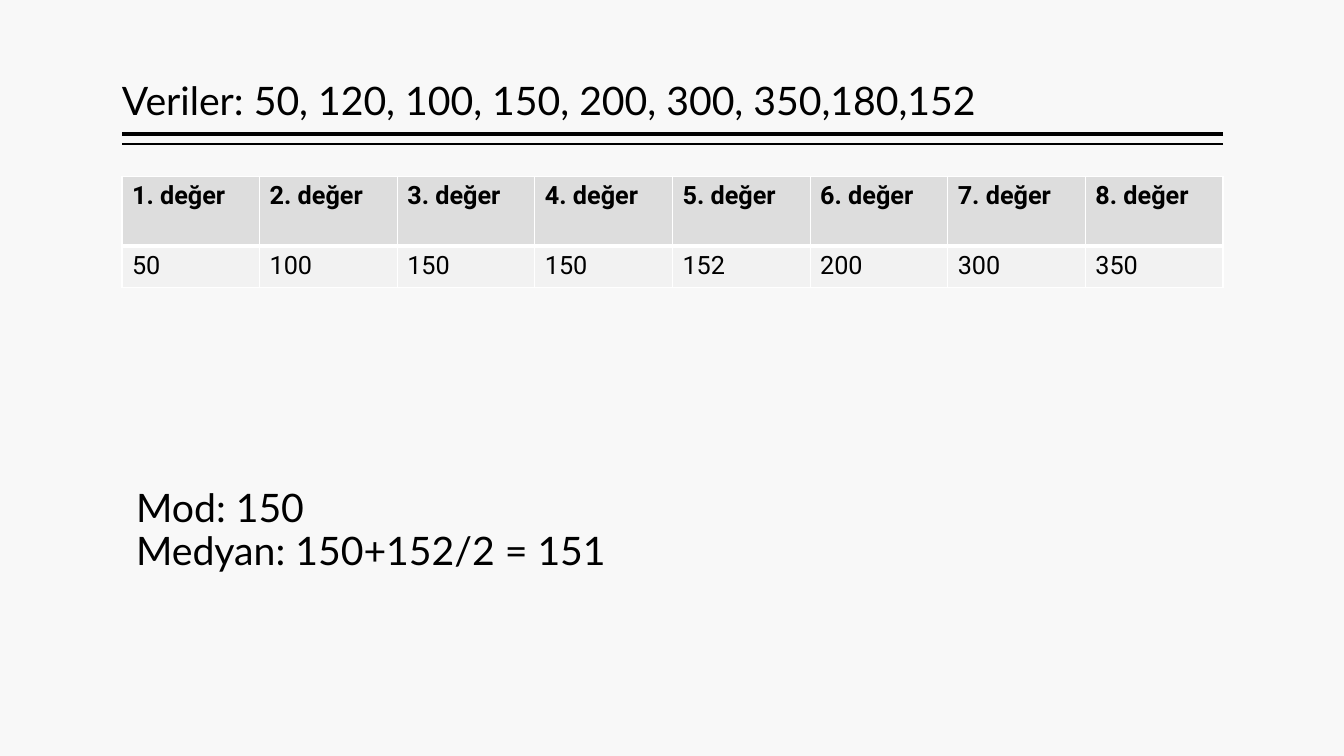
from lxml import etree
from pptx import Presentation
from pptx.dml.color import RGBColor
from pptx.enum import shapes, text
from pptx.oxml import ns
from pptx.util import Inches, Pt

BLACK = RGBColor(0, 0, 0)
WHITE = RGBColor(255, 255, 255)
PAGE_FILL = RGBColor(0xF8, 0xF8, 0xF8)
HEADER_FILL = RGBColor(0xDD, 0xDD, 0xDD)
BODY_FILL = RGBColor(0xF2, 0xF2, 0xF2)

DATA_TITLE = "Veriler: 50, 120, 100, 150, 200, 300, 350,180,152"
SORTED_VALUES = [50, 100, 150, 150, 152, 200, 300, 350]
RESULTS = ["Mod: 150", "Medyan: 150+152/2 = 151"]


def add_rule(page, left, top, width, weight):
    rule = page.shapes.add_connector(
        shapes.MSO_CONNECTOR.STRAIGHT,
        Inches(left + width), Inches(top), Inches(left), Inches(top))
    rule.line.color.rgb = BLACK
    rule.line.width = Pt(weight)
    etree.SubElement(rule._element.spPr, ns.qn("a:effectLst"))


def add_large_text(page, left, top, width, height, lines):
    """Add bottom-anchored lines in the heading style."""
    box = page.shapes.add_textbox(
        Inches(left), Inches(top), Inches(width), Inches(height))
    frame = box.text_frame
    frame.word_wrap = True
    frame.vertical_anchor = text.MSO_ANCHOR.BOTTOM
    frame.margin_left = frame.margin_right = 0
    frame.text = "\n".join(lines)
    for para in frame.paragraphs:
        para.line_spacing = 0.9
        para.font.name = "Lato"
        para.font.size = Pt(28)
        para.font.color.rgb = BLACK


def add_heading(page, left, top, width, height):
    """Place the title with a thick and a thin rule below it."""
    add_large_text(page, left, top, width, height, [DATA_TITLE])
    bottom = top + height
    add_rule(page, left, bottom + 0.05, width, 3)
    add_rule(page, left, bottom + 0.15, width, 1)


def set_borders(cell, weights):
    """Draw white borders; weights maps each side's tag to points."""
    properties = cell._tc.get_or_add_tcPr()
    for position, (side, weight) in enumerate(weights.items()):
        border = etree.Element(ns.qn(f"a:{side}"), w=str(Pt(weight)))
        fill = etree.SubElement(border, ns.qn("a:solidFill"))
        etree.SubElement(fill, ns.qn("a:srgbClr"), val=str(WHITE))
        properties.insert(position, border)


def add_value_table(page, left, top, width, row_heights):
    headers = [f"{number}. değer" for number in range(1, len(SORTED_VALUES) + 1)]
    rows = [headers, SORTED_VALUES]
    table = page.shapes.add_table(
        len(rows), len(headers), Inches(left), Inches(top),
        Inches(width), Inches(sum(row_heights))).table
    for column in table.columns:
        column.width = Inches(width / len(headers))
    for row_index, values in enumerate(rows):
        is_header = row_index == 0
        table.rows[row_index].height = Inches(row_heights[row_index])
        for column_index, value in enumerate(values):
            cell = table.cell(row_index, column_index)
            cell.text = str(value)
            cell.fill.solid()
            cell.fill.fore_color.rgb = HEADER_FILL if is_header else BODY_FILL
            set_borders(cell, {"lnL": 1, "lnR": 1,
                               "lnT": 1 if is_header else 3,
                               "lnB": 3 if is_header else 1})
            font = cell.text_frame.paragraphs[0].font
            font.name = "Roboto"
            font.size = Pt(18)
            font.bold = is_header
            font.color.rgb = BLACK


def main():
    deck = Presentation()
    deck.slide_width = Inches(13.33)
    deck.slide_height = Inches(7.5)
    page = deck.slides.add_slide(deck.slide_layouts[6])
    page.background.fill.solid()
    page.background.fill.fore_color.rgb = PAGE_FILL

    left, width = 1.21, 10.92
    add_heading(page, left, 0.08, width, 1.2)
    add_value_table(page, left, 1.75, width, [0.69, 0.41])
    add_large_text(page, left + 0.14, 4.54, width, 1.2, RESULTS)
    deck.save("out.pptx")


if __name__ == "__main__":
    main()
